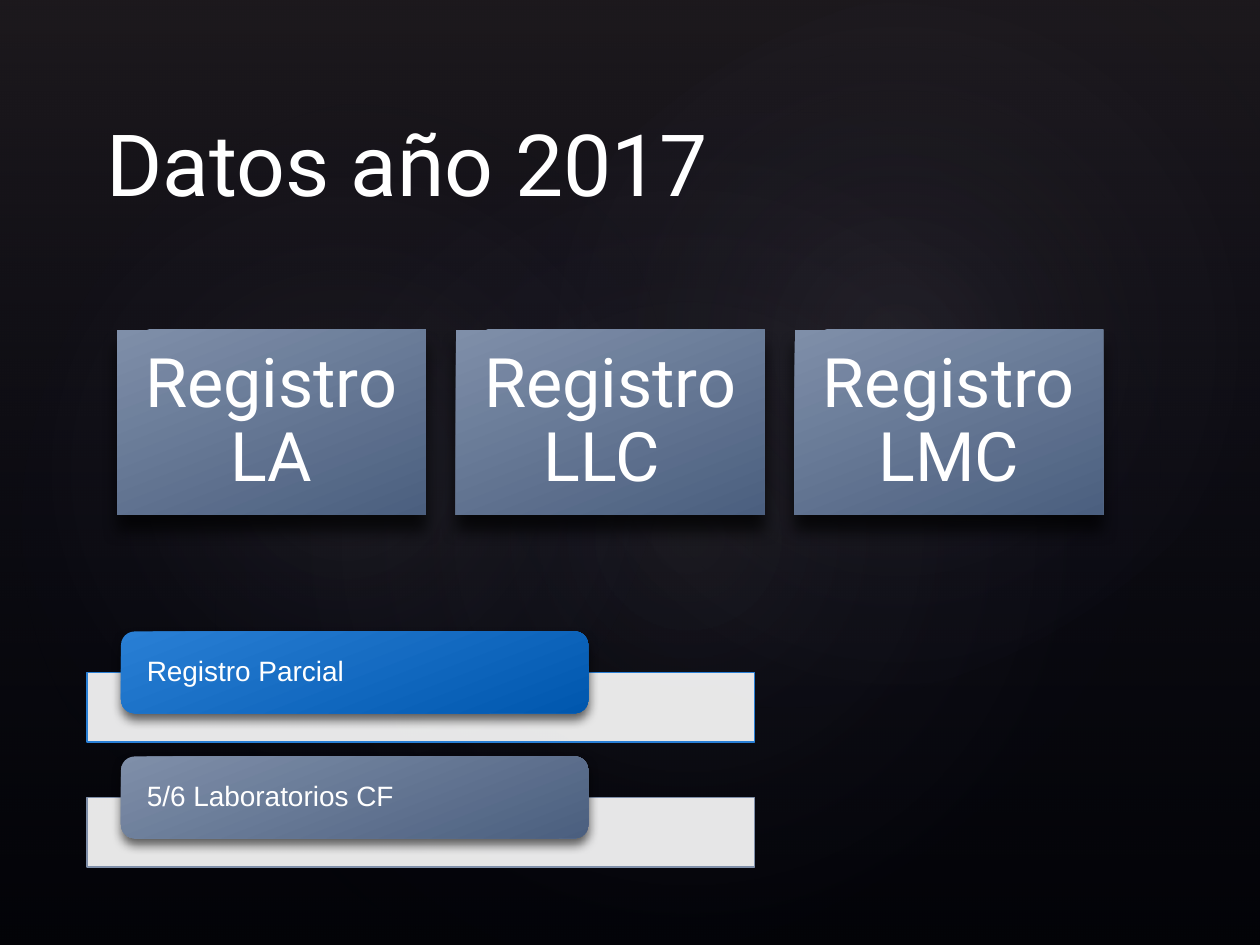
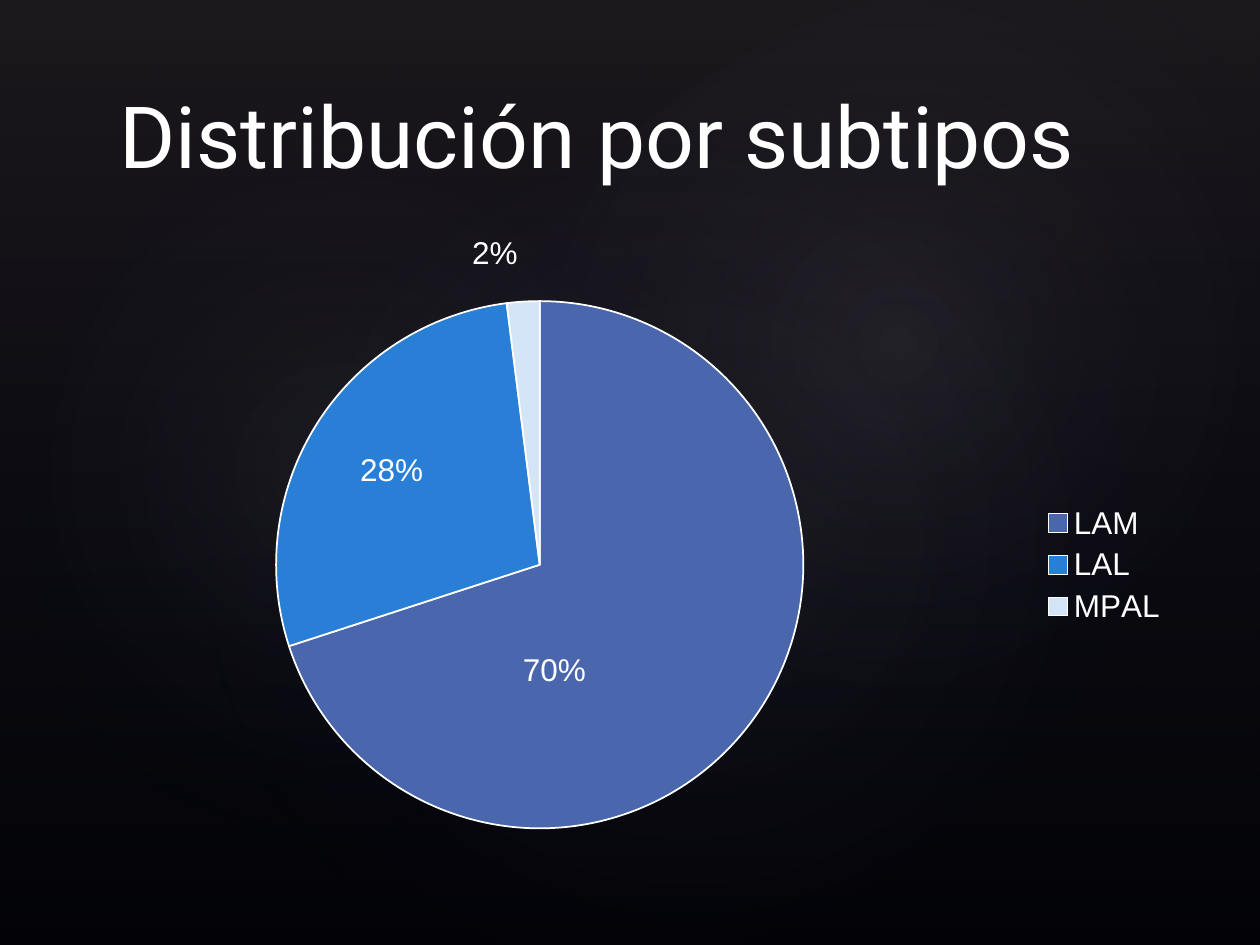
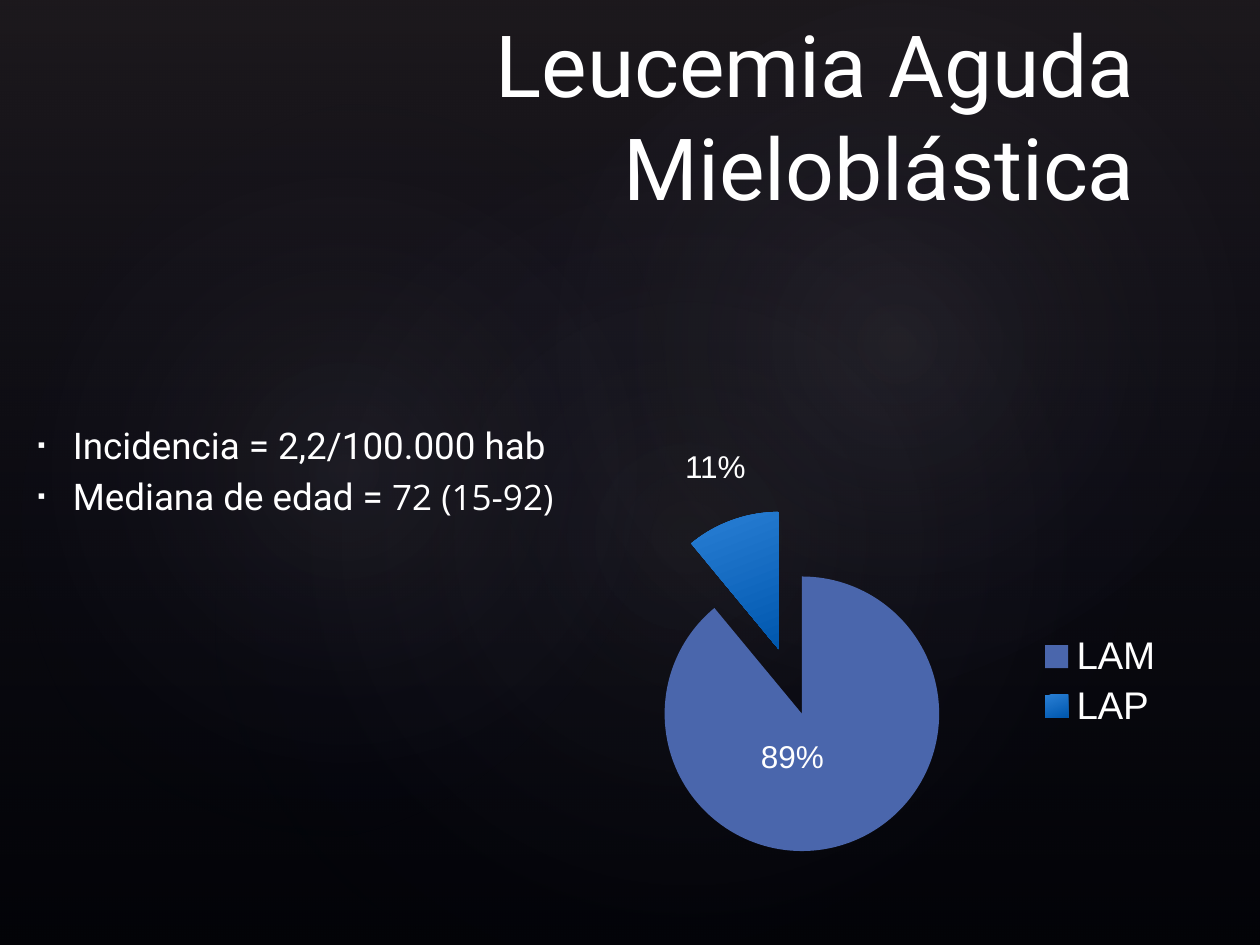
from lxml.etree import SubElement
from pptx import Presentation
from pptx.chart.data import CategoryChartData
from pptx.dml.color import RGBColor
from pptx.enum.chart import XL_CHART_TYPE as ChartType, XL_LEGEND_POSITION as LegendPosition
from pptx.enum.shapes import MSO_SHAPE as Shape
from pptx.enum.text import MSO_ANCHOR as Anchor, PP_ALIGN as Align
from pptx.oxml.ns import qn
from pptx.util import Cm, Pt

WHITE = "FFFFFF"
INDIGO = "4A66AC"
BLUE = "297FD5"
DEEP_BLUE = "0057AE"
PALE_BLUE = "D4E5F7"
SLATE = "7F8FA9"
DEEP_SLATE = "4B5F7F"
NIGHT = "242852"
PLUM = "504652"
MIST = "C4BCC6"

TITLE_FONT = "Roboto"
LABEL_FONT = "Arial"
SHEEN_ANGLE = 69


def rgb(color):
    return RGBColor.from_string(color)


def box(left, top, width, height):
    return Cm(left), Cm(top), Cm(width), Cm(height)


def style_font(font, name, size, color=WHITE):
    font.name = name
    font.size = Pt(size)
    font.color.rgb = rgb(color)


def fill_gradient(fill, start, end, angle=SHEEN_ANGLE):
    """Fill from start to end; the angle runs clockwise from the left edge."""
    fill.gradient()
    fill.gradient_angle = 360 - angle
    for stop, color in zip(fill.gradient_stops, (start, end)):
        stop.color.rgb = rgb(color)


def set_opacity(shape, *percents):
    """Give the fill colours of a shape, in order, their opacity."""
    for color, percent in zip(shape.element.spPr.iter(qn("a:srgbClr")), percents):
        SubElement(color, qn("a:alpha")).set("val", str(percent * 1000))


def add_plain_shape(slide, kind, bounds):
    shape = slide.shapes.add_shape(kind, *box(*bounds))
    shape.shadow.inherit = False
    shape.line.fill.background()
    return shape


def add_drop_shadow(shape, opacity, blur, distance):
    effects = shape.element.spPr.find(qn("a:effectLst"))
    shadow = SubElement(effects, qn("a:outerShdw"), blurRad=str(Pt(blur)),
                        dist=str(Pt(distance)), dir="5400000", rotWithShape="0")
    color = SubElement(shadow, qn("a:srgbClr"), val="000000")
    SubElement(color, qn("a:alpha"), val=str(opacity * 1000))


def add_glow(slide, bounds, rotation, opacity):
    """Add an ellipse that fades from its centre to nothing."""
    glow = add_plain_shape(slide, Shape.OVAL, bounds)
    glow.rotation = rotation
    fill_gradient(glow.fill, MIST, NIGHT)
    set_opacity(glow, opacity, 0)
    gradient = glow.element.spPr.find(qn("a:gradFill"))
    gradient.findall(".//" + qn("a:gs"))[-1].set("pos", "58000")
    gradient.remove(gradient.find(qn("a:lin")))
    path = SubElement(gradient, qn("a:path"), path="circle")
    SubElement(path, qn("a:fillToRect"), l="50000", t="50000", r="50000", b="50000")
    return glow


def build_backdrop(layout, slide):
    """Draw the night backdrop and hand it to the layout that all slides share."""
    layout.background.fill.solid()
    layout.background.fill.fore_color.rgb = rgb("000000")
    haze = add_plain_shape(slide, Shape.RECTANGLE, (0, 0, 25.4, 19.05))
    fill_gradient(haze.fill, PLUM, NIGHT, 90)
    set_opacity(haze, 36, 10)
    glows = [
        add_glow(slide, (3.81, 2.9, 20.12, 15.85), 328.7, 7),
        add_glow(slide, (-0.76, 3.25, 15.39, 12.45), 294.3, 8),
        add_glow(slide, (9.09, 0.33, 18.01, 13.21), 328.7, 8),
    ]
    for shape in [haze, *glows]:
        layout.shapes.element.append(shape.element)


def add_text(slide, text, bounds, font, size, align=Align.LEFT, anchor=Anchor.TOP):
    frame = slide.shapes.add_textbox(*box(*bounds)).text_frame
    frame.word_wrap = True
    frame.vertical_anchor = anchor
    frame.text = text
    for paragraph in frame.paragraphs:
        paragraph.alignment = align
        style_font(paragraph.runs[0].font, font, size)
    return frame


def add_title(slide, text, left, top, align=Align.LEFT):
    add_text(slide, text, (left, top, 20.96, 2.54), TITLE_FONT, 49, align, Anchor.BOTTOM)


def add_share_label(slide, text, left, top, width):
    add_text(slide, text, (left, top, width, 1.02), LABEL_FONT, 18)


def write_in_shape(shape, text, font, size, align, side_margin, end_margin):
    frame = shape.text_frame
    frame.margin_left = frame.margin_right = Cm(side_margin)
    frame.margin_top = frame.margin_bottom = Cm(end_margin)
    frame.vertical_anchor = Anchor.MIDDLE
    frame.text = text
    paragraph = frame.paragraphs[0]
    paragraph.alignment = align
    paragraph.line_spacing = 0.9
    style_font(paragraph.runs[0].font, font, size)


def add_registry_card(slide, text, left):
    card = add_plain_shape(slide, Shape.RECTANGLE, (left, 6.65, 6.22, 3.73))
    fill_gradient(card.fill, SLATE, DEEP_SLATE)
    add_drop_shadow(card, 70, 9, 9)
    write_in_shape(card, text, TITLE_FONT, 39, Align.CENTER, 0.41, 0.41)


def add_tabbed_band(slide, text, top, light, dark):
    """Add a pale band with a coloured tab that overlaps its upper edge."""
    band = add_plain_shape(slide, Shape.RECTANGLE, (1.75, top + 0.83, 13.46, 1.4))
    band.fill.solid()
    band.fill.fore_color.rgb = rgb(WHITE)
    set_opacity(band, 90)
    band.line.color.rgb = rgb(light)
    band.line.width = Pt(1)
    tab = add_plain_shape(slide, Shape.ROUNDED_RECTANGLE, (2.44, top, 9.42, 1.65))
    fill_gradient(tab.fill, light, dark)
    add_drop_shadow(tab, 60, 6, 3)
    write_in_shape(tab, text, LABEL_FONT, 16, Align.LEFT, 0.44, 0)


def add_pie(slide, shares, bounds, font_size, legend_size):
    """Add a pie with a legend at its right and return its series."""
    data = CategoryChartData()
    data.categories = list(shares)
    data.add_series("Series 1", list(shares.values()))
    chart = slide.shapes.add_chart(ChartType.PIE, *box(*bounds), data).chart
    chart.has_title = False
    style_font(chart.font, "Vollkorn", font_size)
    chart.has_legend = True
    chart.legend.position = LegendPosition.RIGHT
    chart.legend.include_in_layout = False
    style_font(chart.legend.font, LABEL_FONT, legend_size)
    plot = chart.plots[0]
    plot.vary_by_categories = True
    return plot.series[0]


def color_slices(series, colors, outline=None):
    for index, color in enumerate(colors):
        form = series.points[index].format
        form.fill.solid()
        form.fill.fore_color.rgb = rgb(color)
        if outline:
            form.line.color.rgb = rgb(outline)
            form.line.width = Pt(1)
        else:
            form.line.fill.background()


def explode(series, percent):
    categories = series._element.find(qn("c:cat"))
    explosion = categories.makeelement(qn("c:explosion"), {"val": str(percent)})
    categories.addprevious(explosion)


def add_bullet(paragraph):
    paragraph.space_before = Pt(4)
    properties = paragraph._p.get_or_add_pPr()
    properties.set("marL", str(Cm(0.76)))
    properties.set("indent", str(Cm(-0.71)))
    SubElement(properties, qn("a:buSzPct"), val="60000")
    SubElement(properties, qn("a:buFont"), typeface=LABEL_FONT)
    SubElement(properties, qn("a:buChar"), char="▪")


def build_registry_slide(slide):
    add_title(slide, "Datos año 2017", 1.9, 1.9)
    for column, text in enumerate(("Registro LA", "Registro LLC ", "Registro LMC")):
        add_registry_card(slide, text, 2.36 + 6.83 * column)
    add_tabbed_band(slide, "Registro Parcial", 12.73, BLUE, DEEP_BLUE)
    add_tabbed_band(slide, "5/6 Laboratorios CF", 15.25, SLATE, DEEP_SLATE)


def build_subtype_slide(slide):
    add_title(slide, "Distribución por subtipos", 2.16, 1.32)
    series = add_pie(slide, {"LAM": 70, "LAL": 28, "MPAL": 2},
                     (0.84, 5.72, 22.96, 11.33), 18, 18)
    color_slices(series, (INDIGO, BLUE, PALE_BLUE), WHITE)
    add_share_label(slide, "28%", 7.01, 8.94, 1.83)
    add_share_label(slide, "2%", 9.27, 4.57, 1.83)
    add_share_label(slide, "70%", 10.29, 12.98, 3.63)


def build_myeloid_slide(slide):
    facts = add_text(slide, "Incidencia = 2,2/100.000 hab\nMediana de edad = ",
                     (0.46, 7.95, 16.94, 4.09), TITLE_FONT, 21, anchor=Anchor.MIDDLE)
    facts.margin_bottom = Cm(1.15)
    for paragraph in facts.paragraphs:
        add_bullet(paragraph)
    age = facts.paragraphs[1].add_run()
    age.text = "72 (15-92)"
    style_font(age.font, "Open Sans", 20)

    add_title(slide, "Leucemia Aguda Mieloblástica", 2.16, 1.98, Align.RIGHT)
    series = add_pie(slide, {"LAM": 89, "LAP": 11}, (11.05, 9.93, 12.7, 7.62), 10, 22)
    explode(series, 25)
    color_slices(series, (INDIGO, BLUE))
    fill_gradient(series.points[1].format.fill, BLUE, DEEP_BLUE)
    add_share_label(slide, "11%", 13.56, 8.89, 3.02)
    add_share_label(slide, "89%", 15.09, 14.73, 3.02)


def main():
    presentation = Presentation()
    presentation.slide_width = Cm(25.4)
    presentation.slide_height = Cm(19.05)
    blank = presentation.slide_layouts[6]
    slides = [presentation.slides.add_slide(blank) for _ in range(3)]
    build_backdrop(blank, slides[0])
    build_registry_slide(slides[0])
    build_subtype_slide(slides[1])
    build_myeloid_slide(slides[2])
    presentation.save("out.pptx")


if __name__ == "__main__":
    main()
